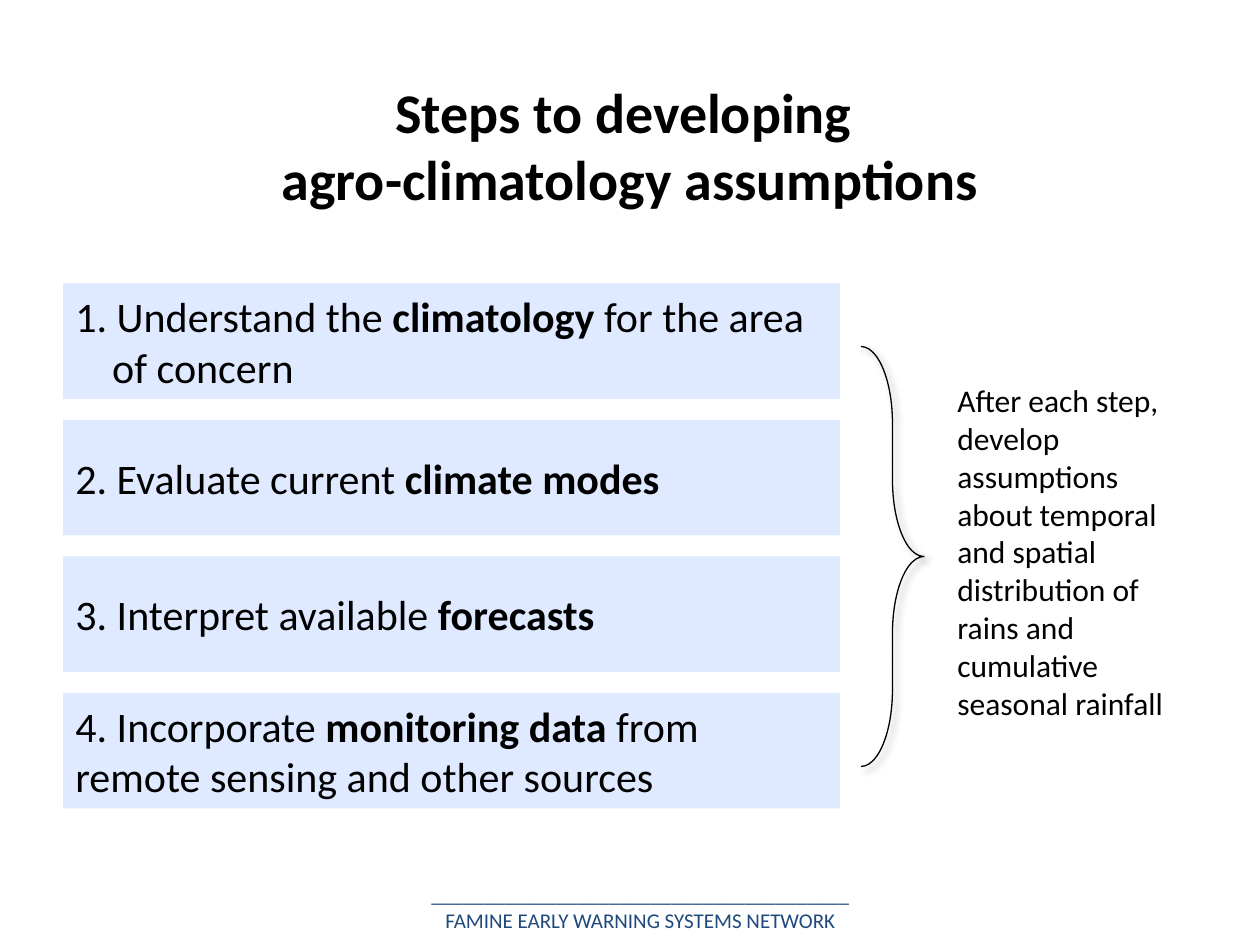
from lxml import etree
from pptx import Presentation
from pptx.dml.color import RGBColor
from pptx.enum.shapes import MSO_SHAPE
from pptx.enum.text import MSO_ANCHOR, PP_ALIGN
from pptx.oxml.ns import qn
from pptx.util import Pt

RECT, BRACE = MSO_SHAPE.RECTANGLE, MSO_SHAPE.RIGHT_BRACE
TOP, MIDDLE = MSO_ANCHOR.TOP, MSO_ANCHOR.MIDDLE
LEFT, CENTER = PP_ALIGN.LEFT, PP_ALIGN.CENTER
BLACK = RGBColor(0x00, 0x00, 0x00)
NAVY = RGBColor(0x1F, 0x49, 0x7D)
PALE_BLUE = RGBColor(0xDF, 0xE9, 0xFF)
PX = 7620

prs = Presentation()
prs.slide_width, prs.slide_height = 1200 * PX, 900 * PX
s = prs.slides.add_slide(prs.slide_layouts[6])


def style(p, size, color=BLACK, align=LEFT):
    p.alignment = align
    p.font.name = "Calibri"
    p.font.size = Pt(size)
    p.font.color.rgb = color


def add_text(x, y, w, h, lines, size, color=BLACK, align=LEFT, anchor=MIDDLE):
    tf = s.shapes.add_textbox(x * PX, y * PX, w * PX, h * PX).text_frame
    tf.word_wrap = True
    tf.vertical_anchor = anchor
    tf.text = lines
    for p in tf.paragraphs:
        style(p, size, color, align)
    return tf


title = add_text(60, 106, 1080, 63, "Steps to developing \vagro-climatology assumptions", 32, align=CENTER)
title.paragraphs[0].font.bold = True

steps = [
    ("1. Understand the ", "climatology ", "for the area", "of concern"),
    ("2. Evaluate current ", "climate modes"),
    ("3. Interpret available ", "forecasts"),
    ("4. Incorporate ", "monitoring data", " from remote sensing and other sources"),
]
for i, parts in enumerate(steps):
    sp = s.shapes.add_shape(RECT, 60 * PX, (270 + 130 * i) * PX, 740 * PX, 110 * PX)
    sp.shadow.inherit = False
    sp.fill.solid()
    sp.fill.fore_color.rgb = PALE_BLUE
    sp.line.fill.background()
    tf = sp.text_frame
    tf.word_wrap = True
    tf.vertical_anchor = MIDDLE
    p = tf.paragraphs[0]
    style(p, 24)
    for j, part in enumerate(parts):
        if j == 3:
            p.add_line_break()
            pPr = p._p.get_or_add_pPr()
            pPr.set("marL", str(35 * PX))
            pPr.set("indent", str(-35 * PX))
        r = p.add_run()
        r.text = part
        r.font.bold = j == 1
        r.font.size = Pt(24)
        r.font.color.rgb = BLACK

add_text(380, 834, 460, 48, "_" * 40 + "\nFAMINE EARLY WARNING SYSTEMS NETWORK", 12, NAVY, CENTER, TOP)

brace = s.shapes.add_shape(BRACE, 820 * PX, 330 * PX, 60 * PX, 400 * PX)
brace.adjustments[0] = 1.22
brace.adjustments[1] = 0.5
brace.fill.background()
brace.line.color.rgb = BLACK
brace.line.width = Pt(0.75)
brace.shadow.inherit = False
effects = brace._element.spPr.find(qn("a:effectLst"))
shadow = etree.SubElement(effects, qn("a:outerShdw"), blurRad=str(Pt(4)), dist=str(Pt(3)),
                          dir="2700000", algn="tl", rotWithShape="0")
shade = etree.SubElement(shadow, qn("a:srgbClr"), val=str(BLACK))
etree.SubElement(shade, qn("a:alpha"), val="40000")

add_text(900, 370, 250, 310, "After each step, develop assumptions about temporal and spatial "
         "distribution of rains and cumulative seasonal rainfall", 18)

prs.save("out.pptx")
